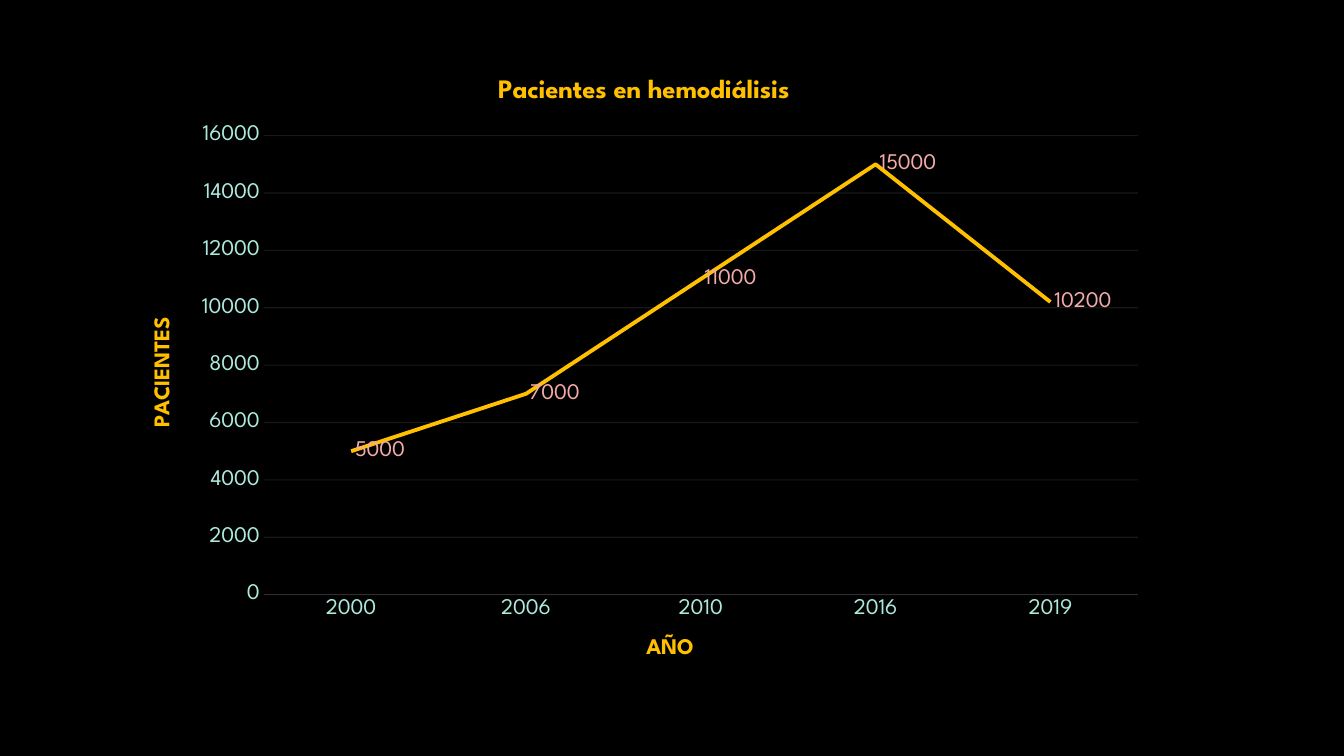
from lxml import etree
from pptx import Presentation
from pptx import util as u
from pptx.chart.data import CategoryChartData
from pptx.dml.color import RGBColor
from pptx.enum import chart as ch
from pptx.oxml.ns import qn

FONT = "League Spartan"
BLACK, GOLD, MINT, PINK, PALE = "000000", "FFC000", "ACEADD", "F2ABA9", "F2F2F2"
PATIENTS = {"2000": 5000, "2006": 7000, "2010": 11000, "2016": 15000, "2019": 10200}


def color(value):
    return RGBColor.from_string(value)


def style_font(font, size, value, bold=False):
    font.name = FONT
    font.size = u.Pt(size)
    font.bold = bold
    font.color.rgb = color(value)


def set_title(owner, words, size):
    """Title a chart or an axis in bold gold."""
    frame = (owner.chart_title if hasattr(owner, "chart_title") else owner.axis_title).text_frame
    frame.text = words
    style_font(frame.paragraphs[0].font, size, GOLD, bold=True)


def faint_line(line):
    line.width = u.Pt(0.75)
    line.color.rgb = color(PALE)
    rgb = line.fill._xPr.find(".//" + qn("a:srgbClr"))
    etree.SubElement(rgb, qn("a:alpha"), val="10000")


def style_axis(axis, words):
    axis.major_tick_mark = axis.minor_tick_mark = ch.XL_TICK_MARK.NONE
    style_font(axis.tick_labels.font, 16, MINT)
    set_title(axis, words, 16)


def add_patient_chart(slide, left, top, width, height):
    data = CategoryChartData()
    data.categories = list(PATIENTS)
    data.add_series("Series 1", list(PATIENTS.values()))
    frame = slide.shapes.add_chart(
        ch.XL_CHART_TYPE.LINE, u.Inches(left), u.Inches(top),
        u.Inches(width), u.Inches(height), data)
    chart = frame.chart
    style_font(chart.font, 16, "FFFFFF")
    chart.has_legend = False
    set_title(chart, "Pacientes en hemodiálisis", 19)
    chart.chart_title.include_in_layout = False

    # Axes and gridlines
    years, counts = chart.category_axis, chart.value_axis
    style_axis(years, "AÑO")
    style_axis(counts, "PACIENTES")
    faint_line(years.format.line)
    counts.format.line.fill.background()
    counts.minimum_scale, counts.maximum_scale, counts.major_unit = 0, 16000, 2000
    faint_line(counts.major_gridlines.format.line)

    # Line and its value labels
    plot = chart.plots[0]
    plot.vary_by_categories = False
    series = plot.series[0]
    series.smooth = False
    series.marker.style = ch.XL_MARKER_STYLE.NONE
    series.format.line.color.rgb = color(GOLD)
    series.format.line.width = u.Pt(2.75)
    labels = series.data_labels
    labels.show_value = True
    labels.position = ch.XL_LABEL_POSITION.RIGHT
    style_font(labels.font, 16, PINK)


def main():
    presentation = Presentation()
    presentation.slide_width = u.Inches(13.33)
    presentation.slide_height = u.Inches(7.5)
    slide = presentation.slides.add_slide(presentation.slide_layouts[6])
    slide.background.fill.solid()
    slide.background.fill.fore_color.rgb = color(BLACK)
    add_patient_chart(slide, 1.28, 0.53, 10.21, 6.25)
    presentation.save("out.pptx")


if __name__ == "__main__":
    main()
